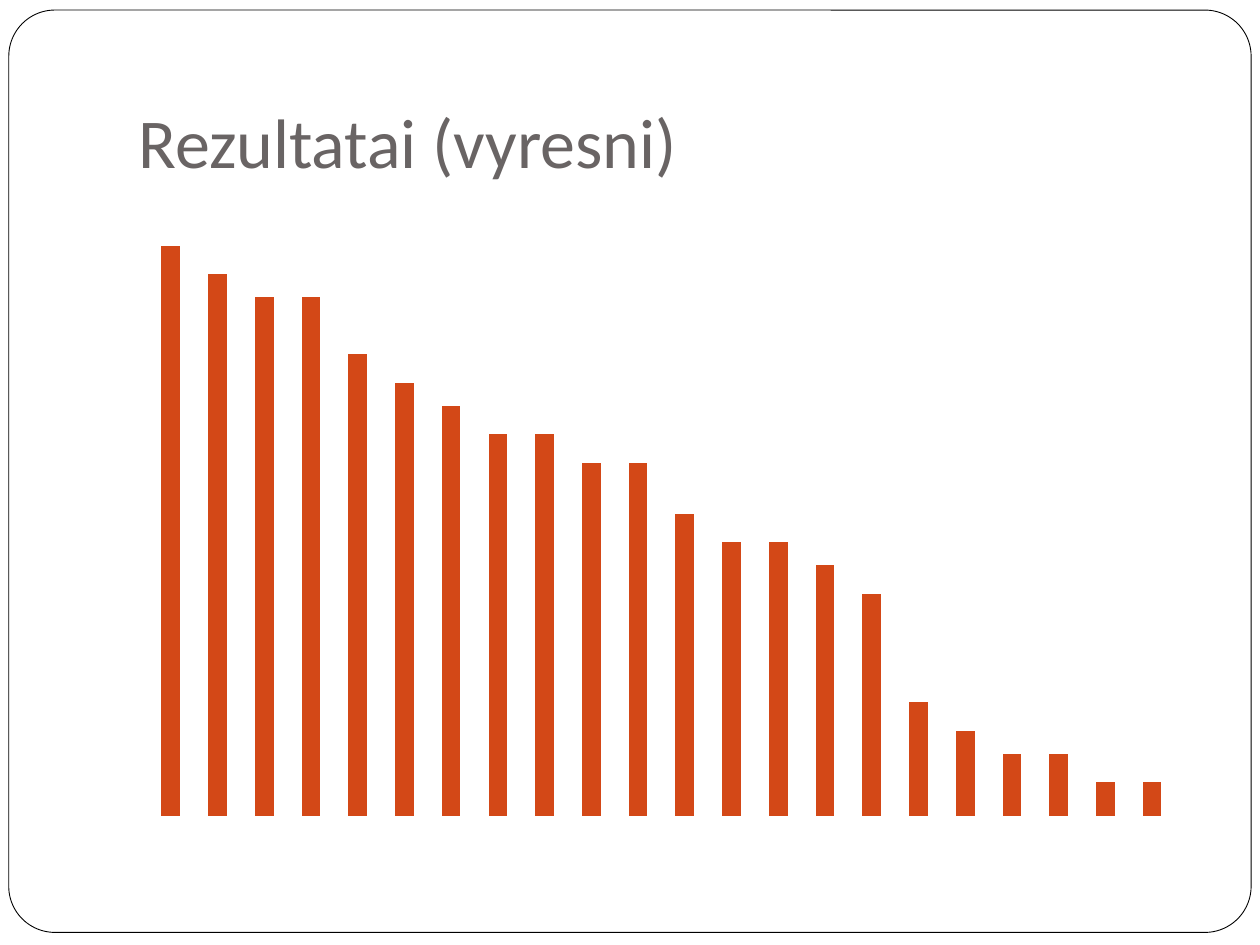
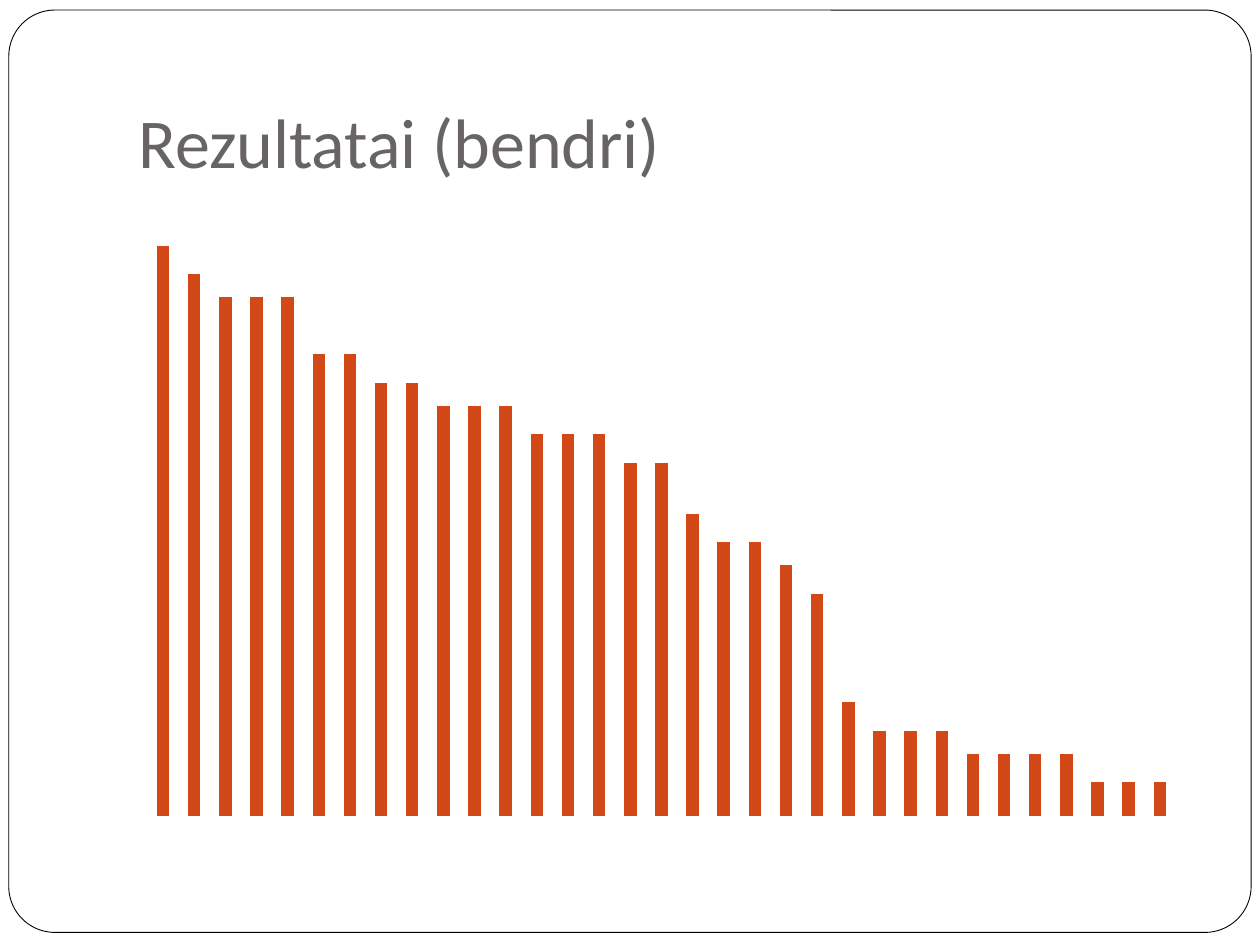
import pptx
import pptx.chart.data
import pptx.dml.color
import pptx.enum.chart
import pptx.enum.shapes
import pptx.enum.text
import pptx.util
from lxml import etree

Inches, Pt = pptx.util.Inches, pptx.util.Pt

RESULTS = [
    ("Rezultatai (vyresni)",
     [100, 95, 91, 91, 81, 76, 72, 67, 67, 62, 62, 53, 48, 48, 44, 39,
      20, 15, 11, 11, 6, 6]),
    ("Rezultatai (bendri)",
     [100, 95, 91, 91, 91, 81, 81, 76, 76, 72, 72, 72, 67, 67, 67, 62, 62,
      53, 48, 48, 44, 39, 20, 15, 15, 15, 11, 11, 11, 11, 6, 6, 6]),
]

FONT = "Calibri"
WHITE, BLACK, TITLE_GREY, BAR_ORANGE = "FFFFFF", "000000", "696464", "D34817"

FRAME_BOX = (0.07, 0.08, 9.86, 7.32)
TITLE_BOX = (1, 0.3, 8.5, 1.25)
CHART_BOX = (1, 1.58, 8.5, 5)

TITLE_FORMAT = {
    "word_wrap": True,
    "vertical_anchor": pptx.enum.text.MSO_ANCHOR.BOTTOM,
    "margin_left": Inches(0.1),
    "margin_top": Inches(0.05),
    "margin_right": Inches(0.1),
    "margin_bottom": Inches(0.1),
}
AXIS_FORMAT = {"visible": False, "has_major_gridlines": False}
SCALE_FORMAT = {"minimum_scale": 0, "maximum_scale": 106}
PLOT_LAYOUT = {"layoutTarget": "inner", "xMode": "edge", "yMode": "edge",
               "x": 0.02, "y": 0.02, "w": 0.96, "h": 0.96}


def rgb(color):
    return pptx.dml.color.RGBColor.from_string(color)


def inches(box):
    return [Inches(v) for v in box]


def apply(target, values):
    for name, value in values.items():
        setattr(target, name, value)


def set_font(font, size, color):
    apply(font, {"name": FONT, "size": Pt(size)})
    font.color.rgb = rgb(color)


def add_frame(s):
    sp = s.shapes.add_shape(
        pptx.enum.shapes.MSO_SHAPE.ROUNDED_RECTANGLE, *inches(FRAME_BOX))
    sp.adjustments[0] = 0.05
    sp.shadow.inherit = False
    sp.fill.solid()
    sp.fill.fore_color.rgb = rgb(WHITE)
    sp.line.color.rgb = rgb(BLACK)
    sp.line.width = Pt(0.5)


def add_title(s, text):
    tf = s.shapes.add_textbox(*inches(TITLE_BOX)).text_frame
    apply(tf, TITLE_FORMAT)
    r = tf.paragraphs[0].add_run()
    r.text = text
    set_font(r.font, 40, TITLE_GREY)


def fix_plot_area(chart):
    """Pin the inner plot area to fractions of the chart."""
    plot_area = chart.plots[0]._element.getparent()
    ns = etree.QName(plot_area).namespace
    for old in plot_area.findall(f"{{{ns}}}layout"):
        plot_area.remove(old)
    layout = etree.Element(f"{{{ns}}}layout")
    manual = etree.SubElement(layout, f"{{{ns}}}manualLayout")
    for name, value in PLOT_LAYOUT.items():
        etree.SubElement(manual, f"{{{ns}}}{name}", val=str(value))
    plot_area.insert(0, layout)


def add_results_chart(s, values):
    data = pptx.chart.data.CategoryChartData()
    data.categories = [str(i) for i in range(1, len(values) + 1)]
    data.add_series("Series 1", values)
    chart = s.shapes.add_chart(
        pptx.enum.chart.XL_CHART_TYPE.COLUMN_CLUSTERED,
        *inches(CHART_BOX), data).chart
    apply(chart, {"has_title": False, "has_legend": False})
    set_font(chart.font, 18, BLACK)
    for axis in (chart.category_axis, chart.value_axis):
        apply(axis, AXIS_FORMAT)
    apply(chart.value_axis, SCALE_FORMAT)
    plot = chart.plots[0]
    apply(plot, {"vary_by_categories": False, "gap_width": 150})
    fill = plot.series[0].format.fill
    fill.solid()
    fill.fore_color.rgb = rgb(BAR_ORANGE)
    fix_plot_area(chart)


def main():
    prs = pptx.Presentation()
    prs.slide_width, prs.slide_height = Inches(10), Inches(7.5)
    for title, values in RESULTS:
        s = prs.slides.add_slide(prs.slide_layouts[6])
        add_frame(s)
        add_title(s, title)
        add_results_chart(s, values)
    prs.save("out.pptx")


if __name__ == "__main__":
    main()
